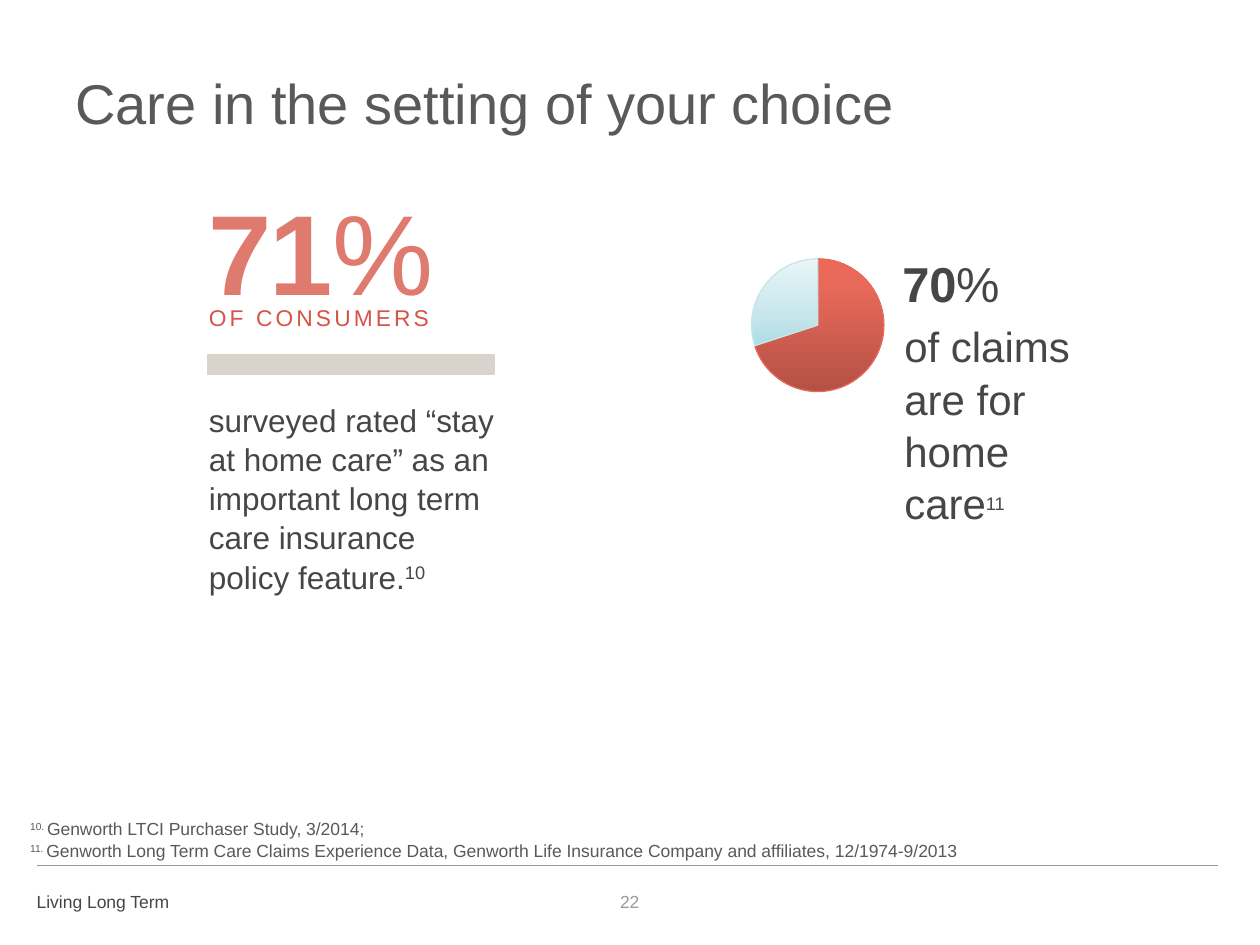
from lxml import etree
from pptx import Presentation, util as u
from pptx.chart import data as chart_data
from pptx.dml.color import RGBColor
from pptx.enum import chart as charts, shapes, text
from pptx.oxml import ns

FONT = "Arial"
DARK, GREY, RED, SALMON, SAND = "454648", "58595B", "D65446", "DF7A6E", "DAD3CC"
SUP, BOLD = "superscript", "bold"

# Text blocks: place in cm, size, colour, paragraphs of (words, style) runs, options
TEXTS = [
    dict(at=(1.27, 1.2, 22.86, 2.29), size=32, color=GREY,
         lines=[[("Care in the setting of your choice", None)]]),
    dict(at=(3.96, 3.42, 5.64, 3.02), size=65, color=SALMON, tracking=-1.5,
         lines=[[("71", BOLD), ("%", None)]]),
    dict(at=(3.96, 5.98, 5.94, 0.81), size=13, color=RED, tracking=1.8,
         lines=[[("OF CONSUMERS", None)]]),
    dict(at=(3.96, 7.92, 6.38, 5.66), size=18, color=DARK,
         lines=[[("surveyed rated “stay at home care” as an important long term "
                  "care insurance policy feature.", None), ("10", SUP)]]),
    dict(at=(17.98, 6.3, 4.67, 5.38), size=24, color=DARK, sup_size=18,
         lines=[[("of claims are for home care", None), ("11", SUP)]]),
    dict(at=(0.36, 16.59, 24.03, 0.89), size=10, color=GREY, anchor=text.MSO_ANCHOR.BOTTOM,
         lines=[[("10. ", SUP), ("Genworth LTCI Purchaser Study, 3/2014;", None)],
                [("11. ", SUP), ("Genworth Long Term Care Claims Experience Data, Genworth Life "
                                 "Insurance Company and affiliates, 12/1974-9/2013", None)]]),
    dict(at=(0.74, 17.83, 10.01, 0.69), size=10, color=DARK, side_inset=0,
         lines=[[("Living Long Term", None)]]),
    dict(at=(11.96, 17.65, 1.47, 1.02), size=10, color="9A9B9B",
         anchor=text.MSO_ANCHOR.MIDDLE, align=text.PP_ALIGN.CENTER,
         lines=[[("22", None)]]),
]
DIVIDER = (4.19, 7.16, 5.77, 0.38)
FOOTER_RULE = (0.74, 17.45, 24.56, 17.45)

# Claims pie: each slice has a value, gradient stops and an outline
PIE_AT = (12.78, 3.28, 7.44, 4.93)
PIE_TITLE = [("70", BOLD), ("%", None)]
SLICES = [
    ("1", 70, [(0, "B35145"), (80, "E8695A"), (100, "EC6858")], "E8695A"),
    ("2", 30, [(0, "ADDDE5"), (35, "C6E6EC"), (100, "E9F6F8")], "C6E6EC"),
]


def rgb(value):
    return RGBColor.from_string(value)


def cm(lengths):
    return [u.Cm(length) for length in lengths]


def set_font(font, size, color):
    font.name, font.size, font.color.rgb = FONT, u.Pt(size), rgb(color)


def add_runs(paragraph, runs, tracking=None, sup_size=None):
    for words, style in runs:
        run = paragraph.add_run()
        run.text = words
        if style == BOLD:
            run.font.bold = True
        props = run._r.get_or_add_rPr()
        if style == SUP:
            props.set("baseline", "30000")
            if sup_size:
                run.font.size = u.Pt(sup_size)
        if tracking:
            props.set("spc", str(round(tracking * 100)))


def add_text(slide, at, size, color, lines, anchor=text.MSO_ANCHOR.TOP, align=None,
             side_inset=0.25, tracking=None, sup_size=None):
    frame = slide.shapes.add_textbox(*cm(at)).text_frame
    frame.word_wrap = True
    frame.vertical_anchor = anchor
    frame.margin_left = frame.margin_right = u.Cm(side_inset)
    for index, runs in enumerate(lines):
        paragraph = frame.add_paragraph() if index else frame.paragraphs[0]
        paragraph.line_spacing = 1.04
        paragraph.alignment = align
        set_font(paragraph.font, size, color)
        add_runs(paragraph, runs, tracking, sup_size)


def place(parent, **fractions):
    """Give a chart part a manual layout, in fractions of the chart."""
    layout = parent.find(ns.qn("c:layout"))
    if layout is None:
        layout = etree.Element(ns.qn("c:layout"))
        parent.insert(0, layout)
    manual = etree.SubElement(layout, ns.qn("c:manualLayout"))
    if "w" in fractions:
        etree.SubElement(manual, ns.qn("c:layoutTarget"), val="inner")
    for mode in ("xMode", "yMode"):
        etree.SubElement(manual, ns.qn(f"c:{mode}"), val="edge")
    for key, fraction in fractions.items():
        etree.SubElement(manual, ns.qn(f"c:{key}"), val=str(fraction))


def add_pie(slide):
    data = chart_data.CategoryChartData()
    data.categories = [name for name, *_ in SLICES]
    data.add_series("Series 1", [value for _, value, *_ in SLICES])
    pie = slide.shapes.add_chart(charts.XL_CHART_TYPE.PIE, *cm(PIE_AT), data).chart
    set_font(pie.font, 18, GREY)
    pie.has_legend = False
    pie.plots[0].vary_by_categories = False

    # Title beside the pie
    pie.has_title = True
    heading = pie.chart_title.text_frame.paragraphs[0]
    set_font(heading.font, 28, DARK)
    heading.font.bold = False
    add_runs(heading, PIE_TITLE)
    place(pie.chart_title._element, x=0.72, y=0.37)
    place(pie._chartSpace.chart.plotArea, x=0.32, y=0.39, w=0.36, h=0.55)

    # Slices
    series = pie.plots[0].series[0]
    for index, (_, _, stops, outline) in enumerate(SLICES):
        look = series.points[index].format
        look.line.color.rgb = rgb(outline)
        look.line.width = u.Pt(0.75)
        look.fill.gradient()
        look.fill.gradient_angle = 90
        stop_list = series._element.xpath("c:dPt/c:spPr/a:gradFill/a:gsLst")[index]
        for old in list(stop_list):
            stop_list.remove(old)
        for position, color in stops:
            stop = etree.SubElement(stop_list, ns.qn("a:gs"), pos=str(position * 1000))
            etree.SubElement(stop, ns.qn("a:srgbClr"), val=color)


def main():
    deck = Presentation()
    deck.slide_width, deck.slide_height = cm((25.4, 19.05))
    slide = deck.slides.add_slide(deck.slide_layouts[6])

    # Footer rule
    rule = slide.shapes.add_connector(shapes.MSO_CONNECTOR.STRAIGHT, *cm(FOOTER_RULE))
    rule.line.color.rgb = rgb("999999")
    rule.line.width = u.Pt(1)
    etree.SubElement(rule._element.spPr, ns.qn("a:effectLst"))

    # Divider under the consumer figure
    divider = slide.shapes.add_shape(shapes.MSO_SHAPE.RECTANGLE, *cm(DIVIDER))
    divider.shadow.inherit = False
    divider.fill.solid()
    divider.fill.fore_color.rgb = divider.line.color.rgb = rgb(SAND)
    divider.line.width = u.Pt(0.75)

    add_pie(slide)
    for block in TEXTS:
        add_text(slide, **block)
    deck.save("out.pptx")


if __name__ == "__main__":
    main()
